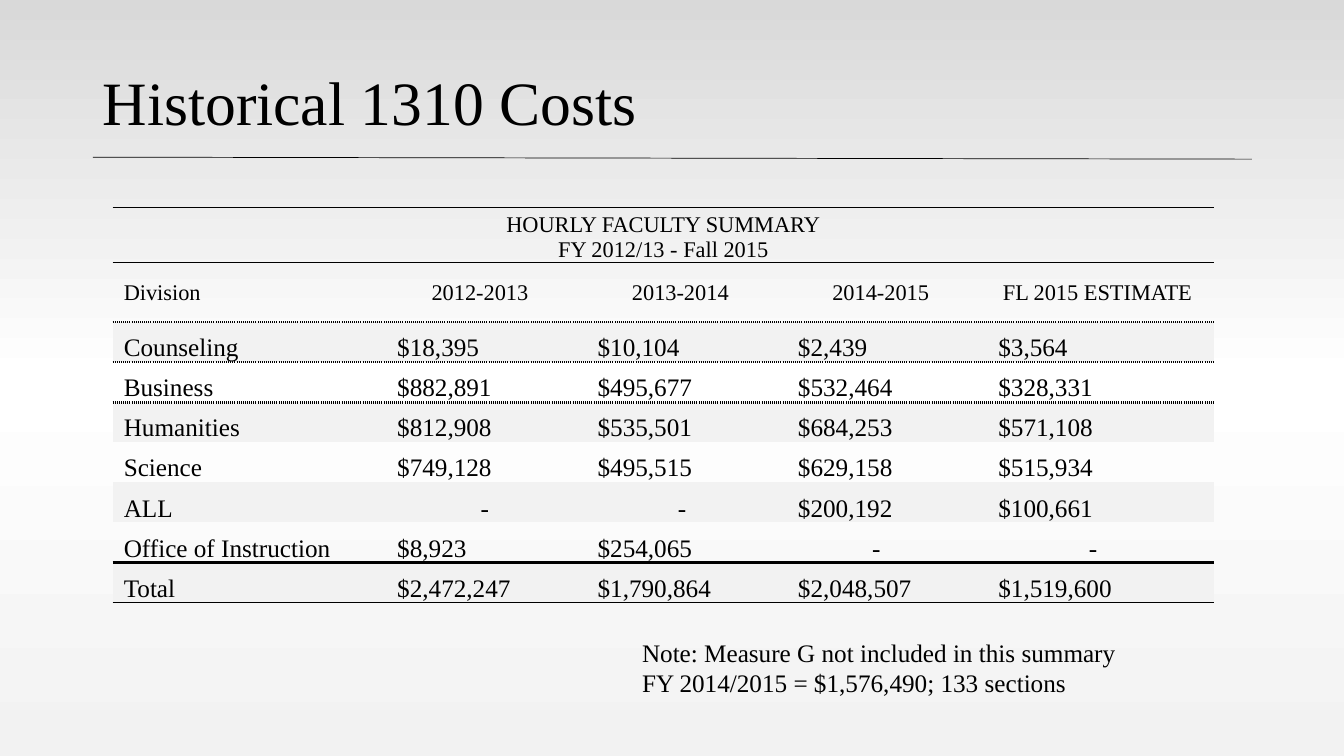
from copy import deepcopy
from dataclasses import dataclass

from lxml import etree
from pptx import Presentation
from pptx import util as u
from pptx.dml.color import RGBColor
from pptx.enum import shapes, text
from pptx.oxml import ns


@dataclass(frozen=True)
class Theme:
    font: str = "Times New Roman"
    ink: str = "000000"
    band: str = "F2F2F2"
    backdrop: tuple = ((0, "D9D9D9"), (50, "FFFFFF"), (100, "F2F2F2"))
    title_size: int = 44
    heading_size: int = 16
    body_size: int = 18
    no_table_style: str = "{2D5ABB26-0587-4C30-8999-92F81FD0307C}"


@dataclass(frozen=True)
class Rule:
    width: float
    dash: str = "solid"


@dataclass(frozen=True)
class Row:
    cells: tuple
    height: float = 1.01
    size: int = Theme.body_size
    anchor: text.MSO_ANCHOR = text.MSO_ANCHOR.BOTTOM
    banded: bool = False
    top: Rule | None = None
    bottom: Rule | None = None


@dataclass(frozen=True)
class TextBlock:
    lines: tuple
    box: tuple
    size: int
    anchor: text.MSO_ANCHOR
    spacing: float = 1.0


THEME = Theme()
LEFT, CENTER = text.PP_ALIGN.LEFT, text.PP_ALIGN.CENTER
HAIRLINE, THIN, THICK = Rule(0.25), Rule(1), Rule(2.25)
DOTTED = Rule(2.25, "sysDot")
LABEL_INDENT, AMOUNT_INDENT = 0.25, 0.41
COLUMN_WIDTHS = (6.73, 5.05, 5.05, 5.05, 5.87)
# Right inset that shifts a centred dash, by column
DASH_INSETS = (0.03, 0.03, 0.19, 0.5, 0.5)

ROWS = (
    Row(("HOURLY FACULTY SUMMARY\nFY 2012/13 - Fall 2015", "", "", "", ""),
        1.32, THEME.heading_size, top=THIN, bottom=HAIRLINE),
    Row(("Division", "2012-2013", "2013-2014", "2014-2015", "FL 2015 ESTIMATE"),
        1.5, THEME.heading_size, text.MSO_ANCHOR.MIDDLE, top=HAIRLINE, bottom=DOTTED),
    Row(("Counseling", "$18,395", "$10,104", "$2,439", "$3,564"),
        banded=True, top=DOTTED, bottom=DOTTED),
    Row(("Business", "$882,891", "$495,677", "$532,464", "$328,331"), top=DOTTED),
    Row(("Humanities", "$812,908", "$535,501", "$684,253", "$571,108"), banded=True),
    Row(("Science", "$749,128", "$495,515", "$629,158", "$515,934")),
    Row(("ALL", "-", "-", "$200,192", "$100,661"), banded=True),
    Row(("Office of Instruction", "$8,923", "$254,065", "-", "-"), bottom=THICK),
    Row(("Total", "$2,472,247", "$1,790,864", "$2,048,507", "$1,519,600"),
        banded=True, top=THICK, bottom=THIN),
)

TEXT_BLOCKS = (
    TextBlock(("Historical 1310 Costs",), (2.34, 1.02, 29.21, 3.28),
              THEME.title_size, text.MSO_ANCHOR.MIDDLE, 0.9),
    TextBlock(("Note: Measure G not included in this summary",
               "FY 2014/2015 = $1,576,490; 133 sections"),
              (15.93, 15.93, 14.45, 1.8), THEME.body_size, text.MSO_ANCHOR.TOP),
)


def apply_format(target, values: dict) -> None:
    for name, value in values.items():
        setattr(target, name, value)


def write_lines(frame, lines, size: int, align=LEFT, spacing: float = 1.0,
                indent: float = 0) -> None:
    for number, line in enumerate(lines):
        paragraph = frame.add_paragraph() if number else frame.paragraphs[0]
        apply_format(paragraph, {"alignment": align, "line_spacing": spacing})
        if indent:
            paragraph._p.get_or_add_pPr().set("marL", str(u.Cm(indent)))
        run = paragraph.add_run()
        run.text = line
        apply_format(run.font, {"name": THEME.font, "size": u.Pt(size)})
        run.font.color.rgb = RGBColor.from_string(THEME.ink)


def paint_backdrop(slide) -> None:
    fill = slide.background.fill
    fill.gradient()
    stop_list = fill._fill._gradFill.find(ns.qn("a:gsLst"))
    stop_list.insert(1, deepcopy(stop_list[0]))
    for stop, (position, color) in zip(fill.gradient_stops, THEME.backdrop):
        stop.position = position / 100
        stop.color.rgb = RGBColor.from_string(color)
    fill.gradient_angle = 270


def add_title_rule(slide) -> None:
    rule = slide.shapes.add_connector(
        shapes.MSO_CONNECTOR.STRAIGHT, u.Cm(2.34), u.Cm(3.96), u.Cm(31.55), u.Cm(4.01))
    rule.line.width = u.Pt(0.5)
    rule.line.color.rgb = RGBColor.from_string(THEME.ink)
    etree.SubElement(rule._element.spPr, ns.qn("a:effectLst"))


def add_text_block(slide, block: TextBlock) -> None:
    frame = slide.shapes.add_textbox(*map(u.Cm, block.box)).text_frame
    apply_format(frame, {"word_wrap": True, "vertical_anchor": block.anchor})
    write_lines(frame, block.lines, block.size, spacing=block.spacing)


def add_border(cell, tag: str, rule: Rule | None) -> None:
    if rule is None:
        return
    line = etree.SubElement(cell._tc.get_or_add_tcPr(), ns.qn(tag), w=str(u.Pt(rule.width)))
    solid = etree.SubElement(line, ns.qn("a:solidFill"))
    etree.SubElement(solid, ns.qn("a:srgbClr"), val=THEME.ink)
    etree.SubElement(line, ns.qn("a:prstDash"), val=rule.dash)


def fill_cell(cell, row: Row, column: int, content: str) -> None:
    is_heading = row.size == THEME.heading_size
    is_dash = content == "-"
    spans = cell.is_merge_origin
    centered = is_dash or spans or (is_heading and column > 0)
    apply_format(cell, {
        "vertical_anchor": row.anchor,
        "margin_left": u.Cm(0.03),
        "margin_top": u.Cm(0.03),
        "margin_right": u.Cm(DASH_INSETS[column] if is_dash else 0.03),
        "margin_bottom": 0,
    })
    # Borders come before the fill in the cell properties
    add_border(cell, "a:lnT", row.top)
    add_border(cell, "a:lnB", row.bottom)
    if row.banded:
        cell.fill.solid()
        cell.fill.fore_color.rgb = RGBColor.from_string(THEME.band)
    else:
        cell.fill.background()
    if content:
        if is_dash or (column == 0 and not spans):
            indent = LABEL_INDENT
        else:
            indent = 0 if centered else AMOUNT_INDENT
        write_lines(cell.text_frame, content.split("\n"), row.size,
                    CENTER if centered else LEFT, indent=indent)


def add_cost_table(slide) -> None:
    frame = slide.shapes.add_table(
        len(ROWS), len(COLUMN_WIDTHS), u.Cm(2.84), u.Cm(5.23),
        u.Cm(sum(COLUMN_WIDTHS)), u.Cm(sum(row.height for row in ROWS)))
    costs = frame.table
    apply_format(costs, {"first_row": False, "horz_banding": False})
    costs._tbl.tblPr.find(ns.qn("a:tableStyleId")).text = THEME.no_table_style
    for column, width in zip(costs.columns, COLUMN_WIDTHS):
        column.width = u.Cm(width)
    costs.cell(0, 0).merge(costs.cell(0, len(COLUMN_WIDTHS) - 1))
    for number, row in enumerate(ROWS):
        costs.rows[number].height = u.Cm(row.height)
        for column, content in enumerate(row.cells):
            fill_cell(costs.cell(number, column), row, column, content)


def main() -> None:
    deck = Presentation()
    apply_format(deck, {"slide_width": u.Cm(33.87), "slide_height": u.Cm(19.05)})
    slide = deck.slides.add_slide(deck.slide_layouts[6])
    paint_backdrop(slide)
    # Title with its rule, then the table and the note
    add_title_rule(slide)
    title, note = TEXT_BLOCKS
    add_text_block(slide, title)
    add_cost_table(slide)
    add_text_block(slide, note)
    deck.save("out.pptx")


if __name__ == "__main__":
    main()
